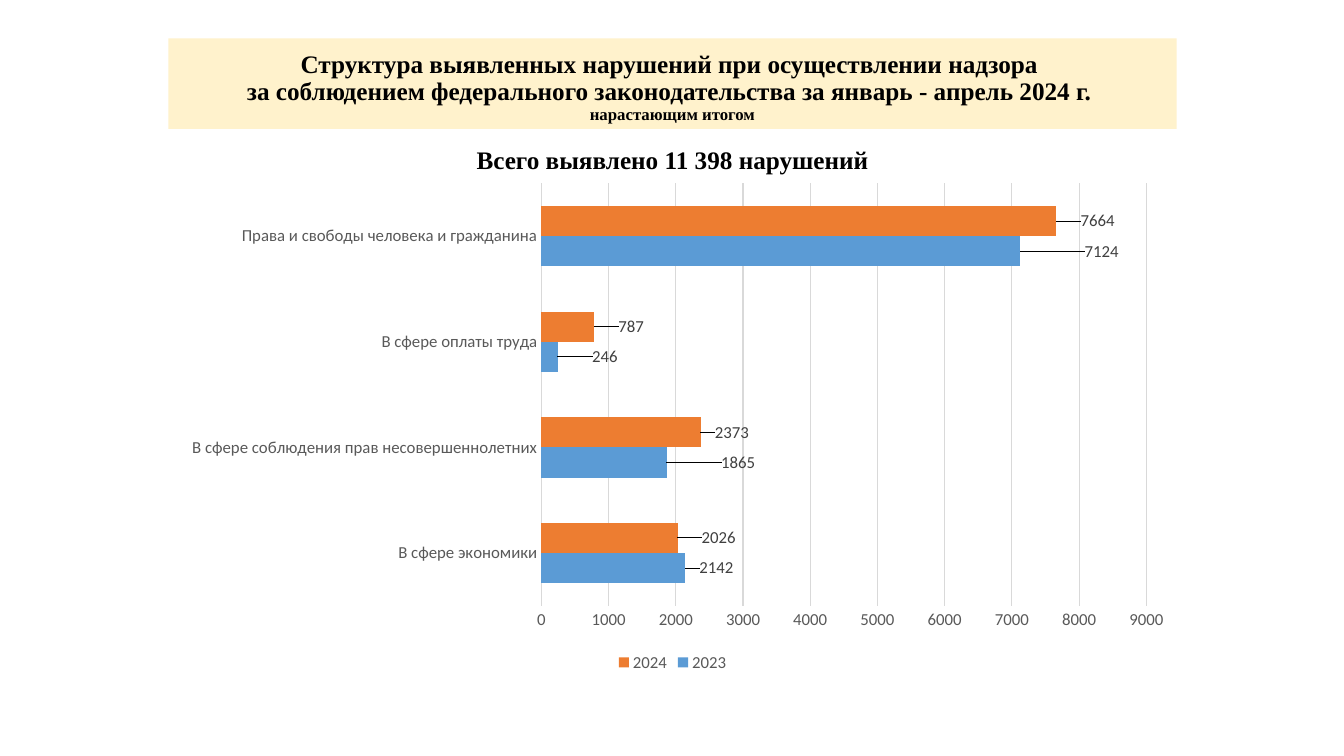
import pptx
import pptx.util
import pptx.chart.data
import pptx.dml.color
import pptx.enum.chart
import pptx.enum.text
import pptx.oxml

Inches = pptx.util.Inches
Pt = pptx.util.Pt
RGBColor = pptx.dml.color.RGBColor

BLACK = RGBColor(0x00, 0x00, 0x00)
CREAM = RGBColor(0xFF, 0xF2, 0xCC)
BLUE = RGBColor(0x5B, 0x9B, 0xD5)
ORANGE = RGBColor(0xED, 0x7D, 0x31)
GREY = RGBColor(0x59, 0x59, 0x59)
DARK = RGBColor(0x40, 0x40, 0x40)
PALE = RGBColor(0xD9, 0xD9, 0xD9)

LEFT, WIDTH = Inches(1.67), Inches(10)
AREAS = [
    "В сфере экономики",
    "В сфере соблюдения прав несовершеннолетних",
    "В сфере оплаты труда",
    "Права и свободы человека и гражданина",
]
YEARS = [
    ("2023", BLUE, [2142, 1865, 246, 7124], [0.01, 0.05, 0.03, 0.06]),
    ("2024", ORANGE, [2026, 2373, 787, 7664], [0.02, 0.01, 0.02, 0.02]),
]


def set_font(font, name, size, color, bold=False):
    font.name = name
    font.size = Pt(size)
    font.color.rgb = color
    font.bold = bold


def set_head(para, space):
    para.alignment = pptx.enum.text.PP_ALIGN.CENTER
    para.line_spacing = space
    para.space_before = Pt(0)
    set_font(para.font, "Times New Roman", 18, BLACK, True)


def add_title(slide):
    title = slide.shapes.title
    title.left, title.top, title.width, title.height = LEFT, Inches(0.38), WIDTH, Inches(0.9)
    title.fill.solid()
    title.fill.fore_color.rgb = CREAM
    frame = title.text_frame
    frame.auto_size = pptx.enum.text.MSO_AUTO_SIZE.NONE
    frame.vertical_anchor = pptx.enum.text.MSO_ANCHOR.BOTTOM
    para = frame.paragraphs[0]
    for line in (
        "Структура выявленных нарушений при осуществлении надзора ",
        "за соблюдением федерального законодательства за январь - апрель 2024 г. ",
    ):
        para.add_run().text = line
        para.add_line_break()
    note = para.add_run()
    note.text = "нарастающим итогом"
    note.font.size = Pt(12)
    set_head(para, 0.9)


def add_total(slide):
    frame = slide.shapes.add_textbox(LEFT, Inches(1.44), WIDTH, Inches(0.36)).text_frame
    frame.word_wrap = True
    para = frame.paragraphs[0]
    para.text = "Всего выявлено 11 398 нарушений"
    set_head(para, 0.8)


def make_layout(inner=False, **spots):
    """Return a manual chart layout; spots are shares of the chart size."""
    spots = "".join(f'<c:{key} val="{val}"/>' for key, val in spots.items())
    target = '<c:layoutTarget val="inner"/><c:xMode val="edge"/><c:yMode val="edge"/>' if inner else ""
    space = "http://schemas.openxmlformats.org/drawingml/2006/chart"
    return pptx.oxml.parse_xml(
        f'<c:layout xmlns:c="{space}"><c:manualLayout>{target}{spots}</c:manualLayout></c:layout>'
    )


def set_axis(axis):
    axis.major_tick_mark = axis.minor_tick_mark = pptx.enum.chart.XL_TICK_MARK.NONE
    axis.format.line.fill.background()
    set_font(axis.tick_labels.font, "Calibri", 12, GREY)


def set_bars(bars, color, shifts):
    bars.format.fill.solid()
    bars.format.fill.fore_color.rgb = color
    labels = bars.data_labels
    labels.show_value = True
    set_font(labels.font, "Calibri", 12, DARK)
    for index, shift in enumerate(shifts):
        label = bars.points[index].data_label
        label.position = pptx.enum.chart.XL_LABEL_POSITION.OUTSIDE_END
        set_font(label.font, "Calibri", 12, DARK)
    for node, shift in zip(labels._element.xpath("c:dLbl"), shifts):
        node.insert(1, make_layout(x=shift, y=0))


def add_bars(slide):
    data = pptx.chart.data.CategoryChartData()
    data.categories = AREAS
    for name, color, vals, shifts in YEARS:
        data.add_series(name, vals)
    kind = pptx.enum.chart.XL_CHART_TYPE.BAR_CLUSTERED
    chart = slide.shapes.add_chart(kind, LEFT, Inches(1.72), WIDTH, Inches(4.99), data).chart
    set_font(chart.font, "Calibri", 10, BLACK)
    chart.has_title = False
    plot = chart.plots[0]
    plot.gap_width = 150
    plot.vary_by_categories = False
    for bars, (name, color, vals, shifts) in zip(plot.series, YEARS):
        set_bars(bars, color, shifts)
    set_axis(chart.category_axis)
    axis = chart.value_axis
    set_axis(axis)
    axis.minimum_scale, axis.maximum_scale, axis.major_unit = 0, 9000, 1000
    axis.has_major_gridlines = True
    axis.major_gridlines.format.line.color.rgb = PALE
    axis.major_gridlines.format.line.width = Pt(0.75)
    chart.has_legend = True
    chart.legend.position = pptx.enum.chart.XL_LEGEND_POSITION.BOTTOM
    chart.legend.include_in_layout = False
    set_font(chart.legend.font, "Calibri", 12, GREY)
    area = chart._chartSpace.xpath("c:chart/c:plotArea")[0]
    for old in area.xpath("c:layout"):
        area.remove(old)
    area.insert(0, make_layout(True, x=0.37, y=0.02, w=0.6, h=0.84))


def main():
    deck = pptx.Presentation()
    deck.slide_width, deck.slide_height = Inches(13.33), Inches(7.5)
    slide = deck.slides.add_slide(deck.slide_layouts[5])
    add_title(slide)
    add_total(slide)
    add_bars(slide)
    deck.save("out.pptx")


if __name__ == "__main__":
    main()
